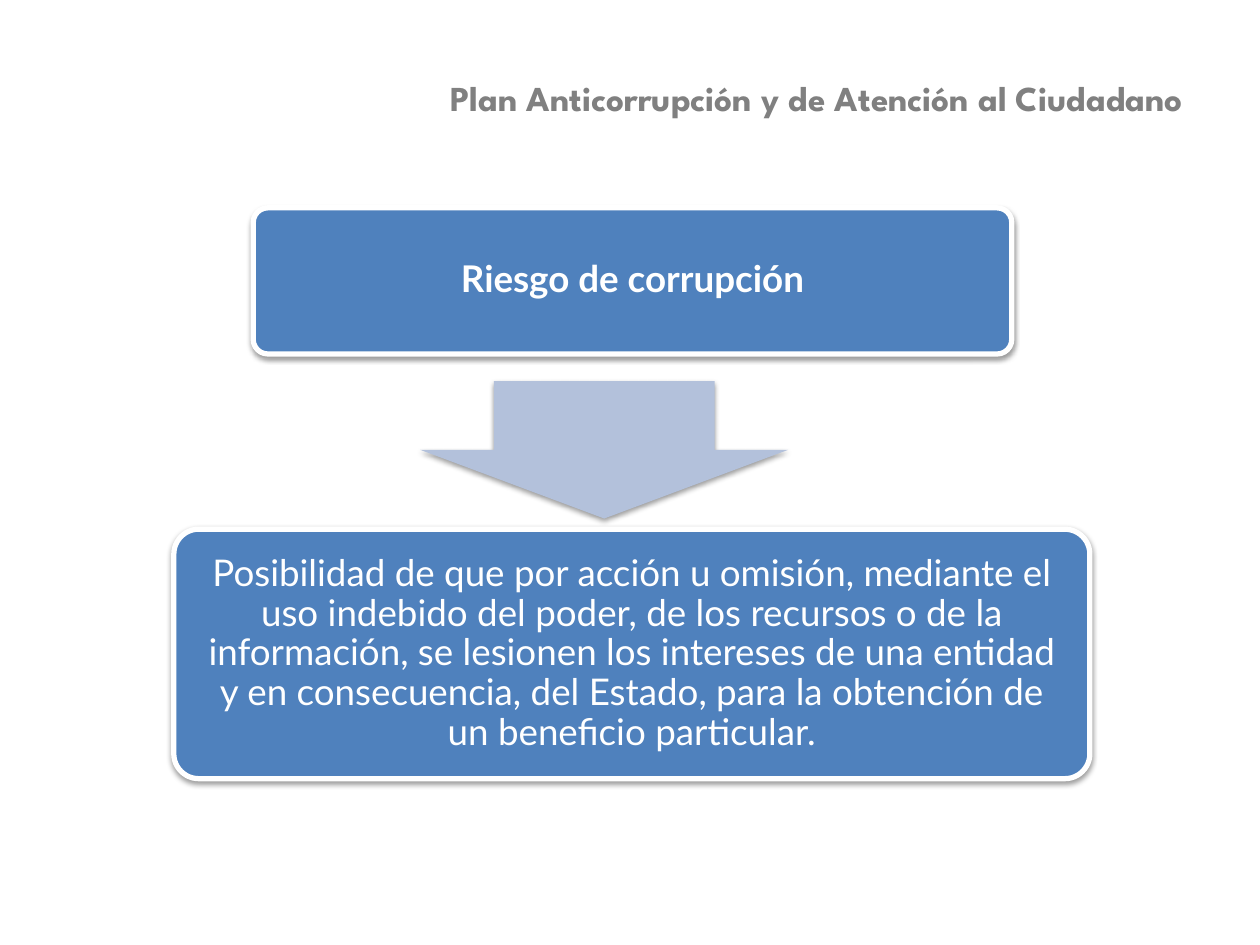
from dataclasses import dataclass

from lxml import etree
from pptx import Presentation
from pptx.dml.color import RGBColor
from pptx.enum.shapes import MSO_SHAPE
from pptx.enum.text import MSO_ANCHOR, MSO_AUTO_SIZE, PP_ALIGN
from pptx.oxml.ns import qn
from pptx.util import Inches, Pt

ROUNDED = MSO_SHAPE.ROUNDED_RECTANGLE
ARROW = MSO_SHAPE.RIGHT_ARROW
MIDDLE = MSO_ANCHOR.MIDDLE
GROW = MSO_AUTO_SIZE.SHAPE_TO_FIT_TEXT
CENTER, RIGHT = PP_ALIGN.CENTER, PP_ALIGN.RIGHT


@dataclass(frozen=True)
class Theme:
    blue: str = "4F81BD"
    pale_blue: str = "B3C1DB"
    white: str = "FFFFFF"
    gray: str = "808080"
    shadow: str = "000000"
    body_font: str = "Lato"
    title_font: str = "League Spartan"
    body_size: int = 21
    title_size: int = 20
    border: int = 3


THEME = Theme()


def add_shadow(shape):
    """Give the shape a soft shadow that falls straight down."""
    shape.shadow.inherit = False
    effects = shape._element.spPr.find(qn("a:effectLst"))
    shadow = etree.SubElement(
        effects, qn("a:outerShdw"), blurRad=str(Pt(3.1)), dist=str(Pt(1.6)),
        dir="5400000", rotWithShape="0")
    color = etree.SubElement(shadow, qn("a:srgbClr"), val=THEME.shadow)
    etree.SubElement(color, qn("a:alpha"), val="38000")


def add_block(page, kind, at, color, adjustments):
    """Add a filled, shadowed shape without an outline."""
    block = page.shapes.add_shape(kind, *map(Inches, at))
    for index, value in enumerate(adjustments):
        block.adjustments[index] = value
    block.fill.solid()
    block.fill.fore_color.rgb = RGBColor.from_string(color)
    block.line.fill.background()
    add_shadow(block)
    return block


def add_span(para, text, font, size, color, bold=False):
    span = para.add_run()
    span.text = text
    span.font.name = font
    span.font.size = Pt(size)
    span.font.bold = bold
    span.font.color.rgb = RGBColor.from_string(color)


def add_card(page, at, text, inset, bold=False):
    """Add a rounded card with a white border and centred text."""
    card = add_block(page, ROUNDED, at, THEME.blue, [0.1])
    card.line.color.rgb = RGBColor.from_string(THEME.white)
    card.line.width = Pt(THEME.border)
    frame = card.text_frame
    frame.word_wrap = True
    frame.vertical_anchor = MIDDLE
    frame.margin_left = frame.margin_right = Inches(inset)
    frame.margin_top = frame.margin_bottom = Inches(inset)
    para = frame.paragraphs[0]
    para.alignment = CENTER
    para.line_spacing = 0.9
    add_span(para, text, THEME.body_font, THEME.body_size, THEME.white, bold)


def add_title(page, at, text):
    box = page.shapes.add_textbox(*map(Inches, at))
    frame = box.text_frame
    frame.word_wrap = True
    frame.auto_size = GROW
    para = frame.paragraphs[0]
    para.alignment = RIGHT
    add_span(para, text, THEME.title_font, THEME.title_size, THEME.gray, True)


def main():
    deck = Presentation()
    deck.slide_width, deck.slide_height = Inches(10), Inches(7.5)
    page = deck.slides.add_slide(deck.slide_layouts[6])

    # Term, arrow and definition
    add_card(page, (2.01, 1.65, 6.02, 1.16), "Riesgo de corrupción", 0.12, True)
    arrow = add_block(page, ARROW, (4.25, 2.11, 1.09, 2.92),
                      THEME.pale_blue, [0.6, 0.5])
    arrow.rotation = 90
    add_card(page, (1.38, 4.2, 7.27, 1.98),
             "Posibilidad de que por acción u omisión, mediante el uso indebido "
             "del poder, de los recursos o de la información, se lesionen los "
             "intereses de una entidad y en consecuencia, del Estado, para la "
             "obtención de un beneficio particular.", 0.15)

    # Slide heading
    add_title(page, (3.35, 0.56, 6.14, 0.44),
              "Plan Anticorrupción y de Atención al Ciudadano")

    deck.save("out.pptx")


if __name__ == "__main__":
    main()
